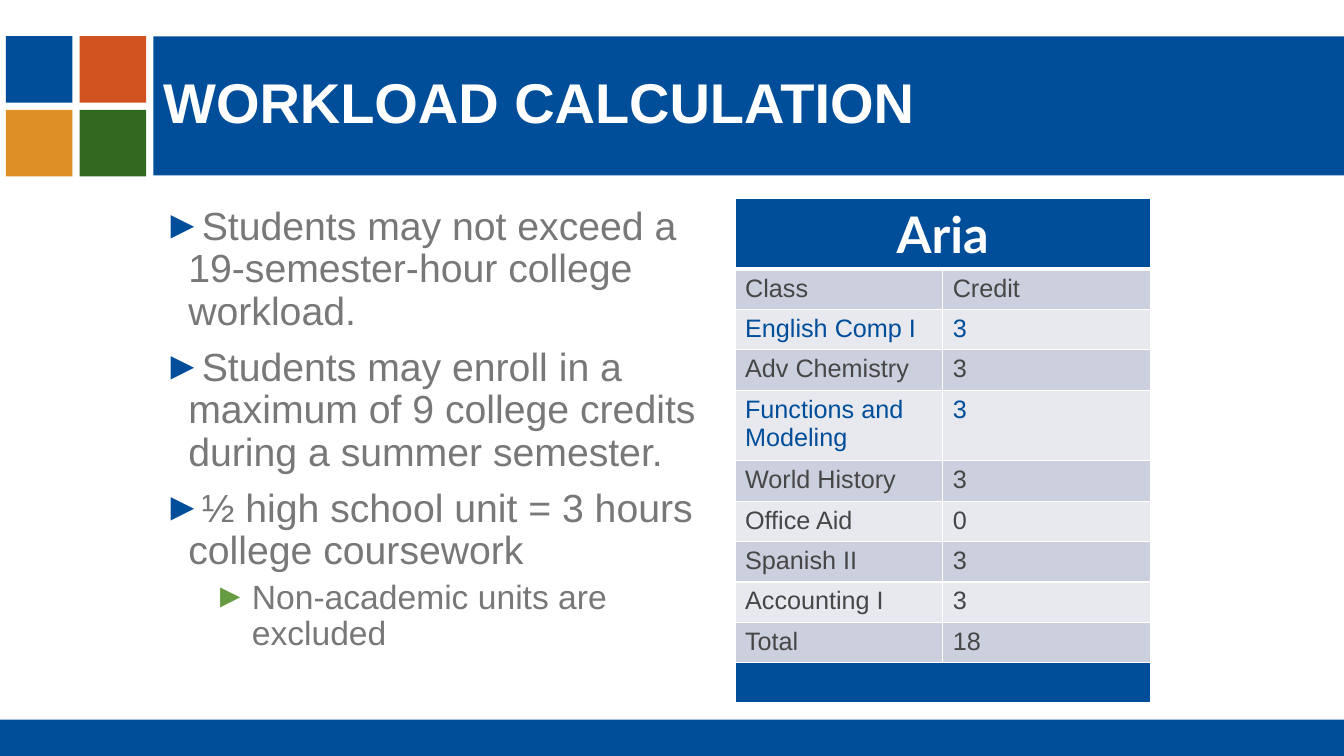
from lxml import etree
from pptx import Presentation, util as u
from pptx.dml.color import RGBColor
from pptx.enum import shapes, text
from pptx.oxml import ns

BLUE, WHITE, GREEN = "004E9A", "FFFFFF", "669B41"
GREY, DARK = "787878", "464646"
BANDS = ("CCD0DE", "E7E9EF")
TILES = ((BLUE, "D15420"), ("DE9027", "326820"))
BULLETS = (
    (0, "Students may not exceed a 19-semester-hour college workload."),
    (0, "Students may enroll in a maximum of 9 college credits during a summer semester."),
    (0, "½ high school unit = 3 hours college coursework"),
    (1, "Non-academic units are excluded"),
)
LEVELS = (
    {"size": 28, "color": BLUE, "left": 0.25, "hang": 0.25, "before": 10},
    {"size": 24, "color": GREEN, "left": 0.88, "hang": 0.38, "before": 5},
)
COURSES = (
    ("Class", "Credit"), ("English Comp I", "3"), ("Adv Chemistry", "3"),
    ("Functions and Modeling", "3"), ("World History", "3"), ("Office Aid", "0"),
    ("Spanish II", "3"), ("Accounting I", "3"), ("Total", "18"),
)
COLLEGE_COURSES = ("English Comp I", "Functions and Modeling")


def paint(fill, color):
    fill.solid()
    fill.fore_color.rgb = RGBColor.from_string(color)


def style(font, color, size, name="Arial", bold=False):
    for key, value in {"name": name, "size": u.Pt(size), "bold": bold}.items():
        setattr(font, key, value)
    font.color.rgb = RGBColor.from_string(color)


def add_block(page, color, left, top, width, height):
    box = page.shapes.add_shape(shapes.MSO_SHAPE.RECTANGLE,
                                *map(u.Inches, (left, top, width, height)))
    box.shadow.inherit = False
    paint(box.fill, color)
    box.line.fill.background()
    return box


def add_tiles(page, left, top, side, pitch):
    for row, colors in enumerate(TILES):
        for column, color in enumerate(colors):
            add_block(page, color, left + column * pitch, top + row * pitch, side, side)


def add_title(page, left, top, width, height):
    bar = add_block(page, BLUE, left, top, width, height)
    bar.text_frame.vertical_anchor = text.MSO_ANCHOR.MIDDLE
    bar.text_frame.word_wrap = True
    para = bar.text_frame.paragraphs[0]
    para.text = "WORKLOAD CALCULATION"
    para.alignment, para.line_spacing = text.PP_ALIGN.LEFT, 0.9
    style(para.runs[0].font, WHITE, 40, bold=True)


def add_bullet(para, level):
    props = para._p.get_or_add_pPr()
    props.set("marL", str(u.Inches(level["left"])))
    props.set("indent", str(-u.Inches(level["hang"])))
    tint = etree.SubElement(props, ns.qn("a:buClr"))
    etree.SubElement(tint, ns.qn("a:srgbClr"), val=level["color"])
    etree.SubElement(props, ns.qn("a:buFont"), typeface="Arial")
    etree.SubElement(props, ns.qn("a:buChar"), char="►")


def add_rules(page, left, top, width, height):
    box = page.shapes.add_textbox(*map(u.Inches, (left, top, width, height)))
    frame = box.text_frame
    frame.word_wrap = True
    for index, (depth, words) in enumerate(BULLETS):
        level = LEVELS[depth]
        para = frame.add_paragraph() if index else frame.paragraphs[0]
        para.text, para.level = words, depth
        add_bullet(para, level)
        para.line_spacing = 0.9
        para.space_before = u.Pt(level["before"] if index else 0)
        style(para.runs[0].font, GREY, level["size"])


def add_borders(cell, top=1, bottom=1):
    props = cell._tc.get_or_add_tcPr()
    for side, points in {"L": 1, "R": 1, "T": top, "B": bottom}.items():
        line = etree.SubElement(props, ns.qn("a:ln" + side), w=str(u.Pt(points)))
        fill = etree.SubElement(line, ns.qn("a:solidFill"))
        etree.SubElement(fill, ns.qn("a:srgbClr"), val=WHITE)


def add_schedule(page, left, top, width, height):
    """Course table with a merged name row above and a merged blue row below."""
    last = len(COURSES) + 1
    table = page.shapes.add_table(last + 1, 2,
                                  *map(u.Inches, (left, top, width, height))).table
    for column in table.columns:
        column.width = u.Inches(width / 2)
    for index, row in enumerate(table.rows):
        row.height = u.Inches(0.67 if index in (0, 4) else 0.38)
        edge = index in (0, last)
        for cell in row.cells:
            add_borders(cell, top=3 if index == 1 else 1, bottom=1 if index else 3)
            paint(cell.fill, BLUE if edge else BANDS[(index - 1) % 2])
        if edge:
            row.cells[0].merge(row.cells[1])
            continue
        course = COURSES[index - 1]
        color = BLUE if course[0] in COLLEGE_COURSES else DARK
        for cell, words in zip(row.cells, course):
            cell.text = words
            style(cell.text_frame.paragraphs[0].runs[0].font, color, 18)
    student = table.cell(0, 0)
    student.text = "Aria"
    para = student.text_frame.paragraphs[0]
    para.alignment = text.PP_ALIGN.CENTER
    style(para.runs[0].font, WHITE, 36, "Lato", True)


def main():
    deck = Presentation()
    deck.slide_width, deck.slide_height = u.Inches(13.33), u.Inches(7.5)
    page = deck.slides.add_slide(deck.slide_layouts[6])
    add_tiles(page, 0.06, 0.36, 0.66, 0.73)
    add_block(page, BLUE, 0, 7.14, 13.33, 0.36)
    add_title(page, 1.52, 0.36, 11.81, 1.38)
    add_rules(page, 1.52, 2, 5.67, 4.64)
    add_schedule(page, 7.29, 1.97, 4.12, 4.76)
    deck.save("out.pptx")


if __name__ == "__main__":
    main()
